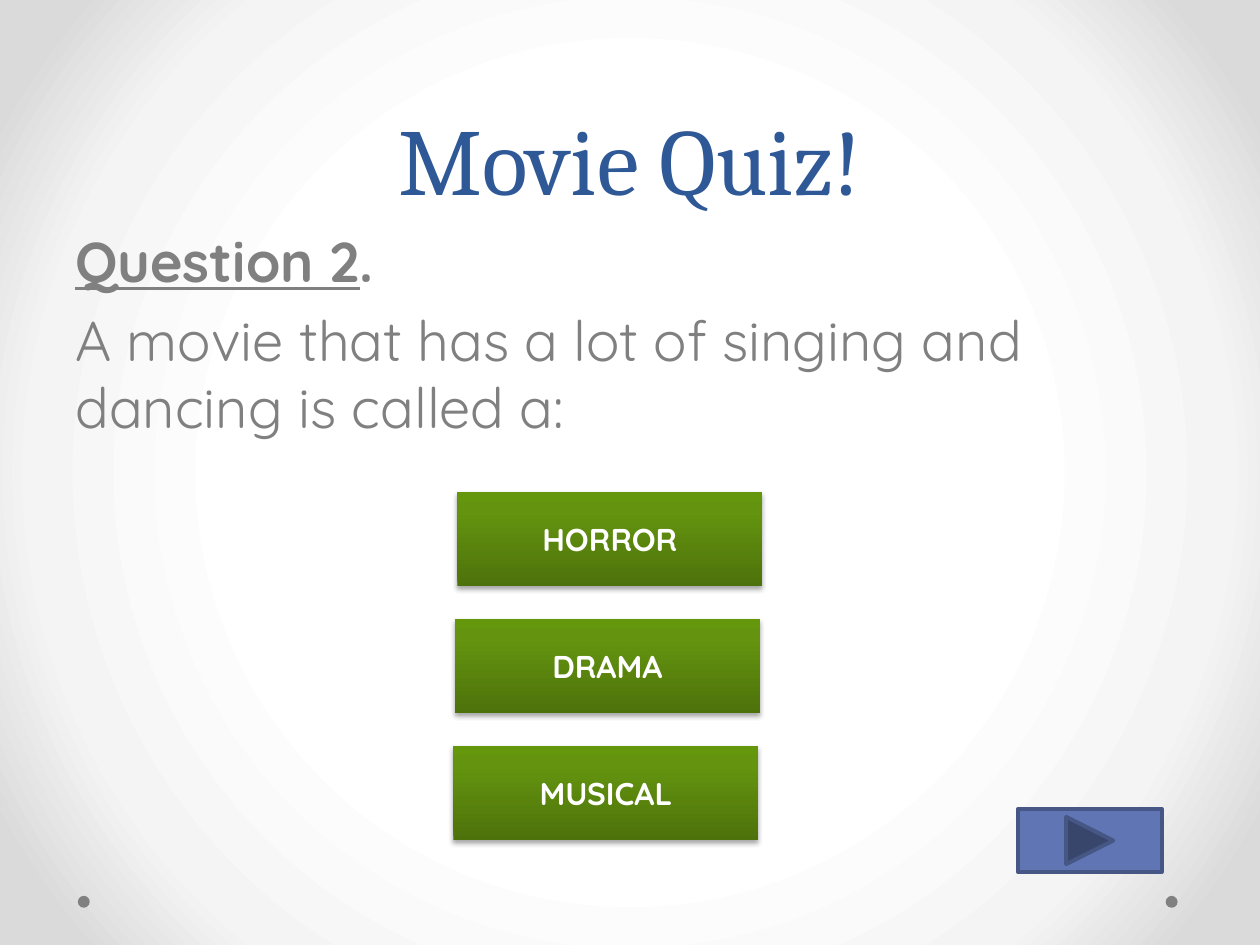
"""Build the Movie Quiz question slide."""
from dataclasses import dataclass

from lxml.etree import SubElement
from pptx import Presentation
from pptx.dml.color import RGBColor
from pptx.enum.shapes import MSO_SHAPE
from pptx.enum.text import MSO_ANCHOR, MSO_AUTO_SIZE, PP_ALIGN
from pptx.oxml import parse_xml
from pptx.oxml.ns import nsdecls, qn
from pptx.util import Cm, Pt

GREY = "808080"
BODY_FONT = "Quicksand"


@dataclass
class Box:
    left: float
    top: float
    width: float
    height: float

    def lengths(self) -> tuple:
        return Cm(self.left), Cm(self.top), Cm(self.width), Cm(self.height)


@dataclass
class Answer:
    text: str
    left: float


ANSWERS = [Answer("HORROR", 9.22), Answer("DRAMA", 9.17), Answer("MUSICAL", 9.14)]
ANSWER_TOP, ANSWER_STEP = 9.91, 2.56
DOT_LEFTS = (23.5, 1.57)


def rgb(color: str) -> RGBColor:
    return RGBColor.from_string(color)


def gradient(stops: list, direction: str) -> str:
    gs = "".join(
        f'<a:gs pos="{pos * 1000}"><a:srgbClr val="{color}"/></a:gs>'
        for pos, color in stops
    )
    return (
        f'<a:gradFill {nsdecls("a")} rotWithShape="1">'
        f"<a:gsLst>{gs}</a:gsLst>{direction}</a:gradFill>"
    )


def set_background(s) -> None:
    direction = (
        '<a:path path="circle">'
        '<a:fillToRect l="50000" t="50000" r="50000" b="50000"/></a:path>'
    )
    fill = gradient([(50, "FFFFFF"), (76, "F4F4F4"), (92, "DADADA")], direction)
    bg = f'<p:bg {nsdecls("p", "a")}><p:bgPr>{fill}<a:effectLst/></p:bgPr></p:bg>'
    s.element.cSld.insert(0, parse_xml(bg))


def style_run(r, font: str, size: float, color: str, bold: bool = False) -> None:
    r.font.name = font
    r.font.size = Pt(size)
    r.font.bold = bold
    r.font.color.rgb = rgb(color)


def add_plain(s, kind: MSO_SHAPE, box: Box, fill: str, line: str = ""):
    sp = s.shapes.add_shape(kind, *box.lengths())
    sp.shadow.inherit = False
    sp.fill.solid()
    sp.fill.fore_color.rgb = rgb(fill)
    if line:
        sp.line.color.rgb = rgb(line)
        sp.line.width = Pt(2.25)
    else:
        sp.line.fill.background()
    return sp


def add_title(s, text: str, box: Box) -> None:
    sp = s.shapes.title
    sp.left, sp.top, sp.width, sp.height = box.lengths()
    tf = sp.text_frame
    tf.text = text
    tf.auto_size = MSO_AUTO_SIZE.NONE
    tf.vertical_anchor = MSO_ANCHOR.BOTTOM
    p = tf.paragraphs[0]
    p.alignment = PP_ALIGN.CENTER
    p.line_spacing = Pt(58)
    style_run(p.runs[0], "Cambria", 54, "2F5897")


def add_question(s, label: str, text: str, box: Box) -> None:
    tf = s.shapes.add_textbox(*box.lengths()).text_frame
    tf.word_wrap = True
    heading, question = tf.paragraphs[0], tf.add_paragraph()
    for part in (label, "."):
        r = heading.add_run()
        r.text = part
        style_run(r, BODY_FONT, 32, GREY, bold=True)
    heading.runs[0].font.underline = True
    question.text = text
    style_run(question.runs[0], BODY_FONT, 32, GREY)
    for p in tf.paragraphs:
        p.space_before = Pt(6.4)


def add_answer(s, answer: Answer, top: float) -> None:
    box = Box(answer.left, top, 6.15, 1.91)
    sp = s.shapes.add_shape(MSO_SHAPE.ACTION_BUTTON_CUSTOM, *box.lengths())
    stops = [(0, "4D720B"), (80, "64940F"), (100, "65970C")]
    spPr = sp.element.spPr
    spPr.append(parse_xml(gradient(stops, '<a:lin ang="16200000" scaled="0"/>')))
    sp.line.fill.background()
    sp.shadow.inherit = False
    shadow = SubElement(
        spPr.find(qn("a:effectLst")), qn("a:outerShdw"),
        blurRad=str(Pt(3.1)), dist=str(Pt(1.8)), dir="5400000", rotWithShape="0",
    )
    color = SubElement(shadow, qn("a:srgbClr"), val="000000")
    SubElement(color, qn("a:alpha"), val="35000")
    tf = sp.text_frame
    tf.text = answer.text
    tf.vertical_anchor = MSO_ANCHOR.MIDDLE
    p = tf.paragraphs[0]
    p.alignment = PP_ALIGN.CENTER
    style_run(p.runs[0], BODY_FONT, 18, "FFFFFF", bold=True)


def main() -> None:
    prs = Presentation()
    prs.slide_width, prs.slide_height = Cm(25.4), Cm(19.05)
    s = prs.slides.add_slide(prs.slide_layouts[5])
    set_background(s)
    for left in DOT_LEFTS:
        add_plain(s, MSO_SHAPE.OVAL, Box(left, 18.06, 0.24, 0.24), GREY)
    add_title(s, "Movie Quiz!", Box(1.27, 0, 22.86, 4.45))
    add_question(
        s, "Question 2",
        "A movie that has a lot of singing and dancing is called a:",
        Box(1.27, 4.45, 22.86, 12.57),
    )
    add_plain(
        s, MSO_SHAPE.ACTION_BUTTON_FORWARD_OR_NEXT,
        Box(20.52, 16.31, 2.9, 1.27), "6076B4", "475785",
    )
    for i, answer in enumerate(ANSWERS):
        add_answer(s, answer, ANSWER_TOP + i * ANSWER_STEP)
    prs.save("out.pptx")


if __name__ == "__main__":
    main()
